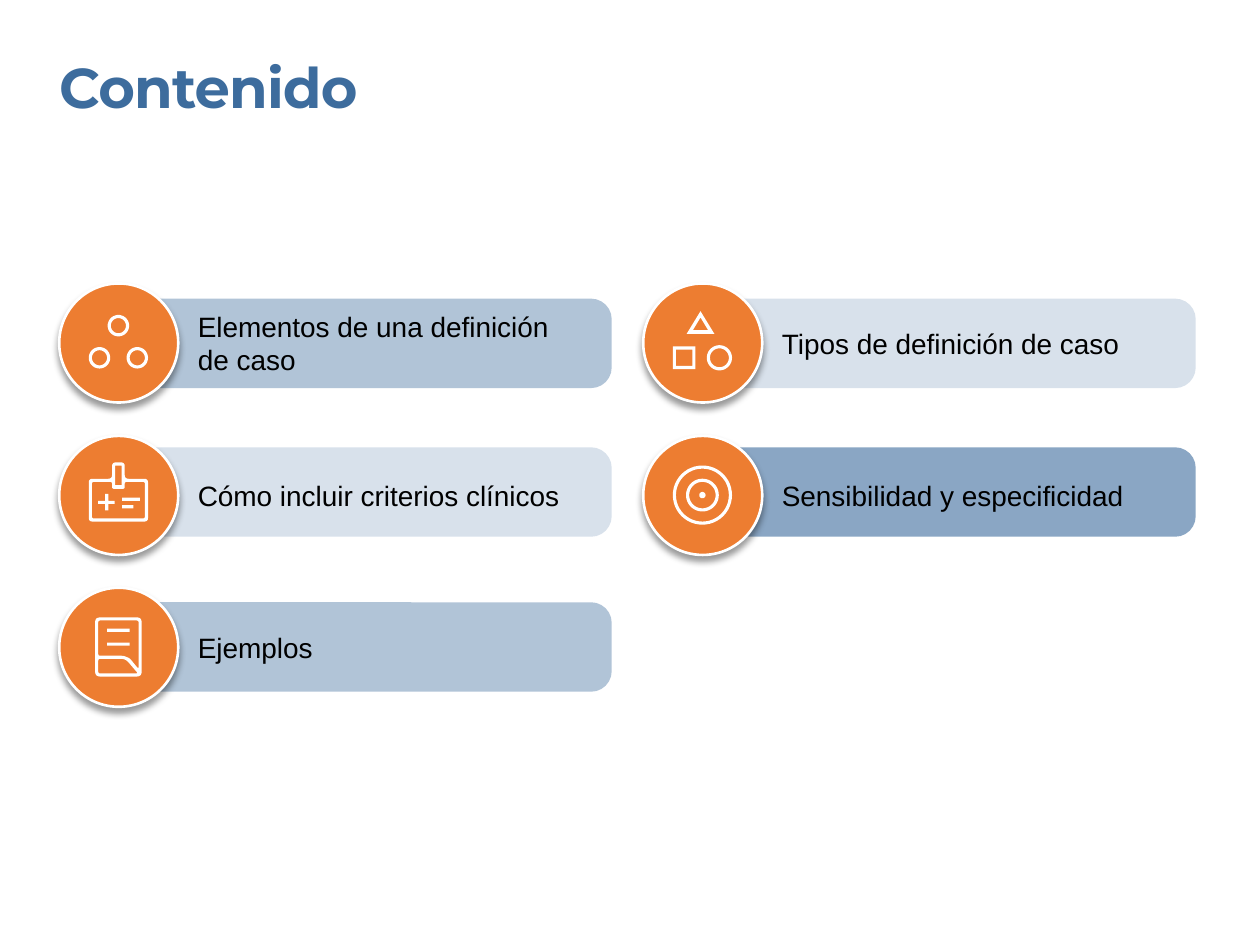
import math

import pptx
import pptx.util
import pptx.dml.color
import pptx.enum.shapes
import pptx.enum.text
import pptx.oxml
import pptx.oxml.ns

PX = 4572  # EMU, 200 px to the inch
COLORS = {"blue": "3D6C9D", "orange": "ED7D31", "white": "FFFFFF", "black": "000000"}
FORMATS = {
    "title": {"name": "Montserrat", "size": pptx.util.Pt(32), "bold": True},
    "label": {"name": "Arial", "size": pptx.util.Pt(16)},
}
SHAPES = pptx.enum.shapes.MSO_SHAPE
DISC = 189
COLUMNS = (94, 1021)
ROWS = (450, 692, 933)
BAR_TOPS = (474, 710, 956)
STROKE = 5


def rgb(name):
    return pptx.dml.color.RGBColor.from_string(COLORS[name])


def xml(tag, body="", attrs=""):
    ns = pptx.oxml.ns.nsdecls("a")
    return pptx.oxml.parse_xml(f"<a:{tag} {ns} {attrs}>{body}</a:{tag}>")


class Deck:
    def __init__(self, width, height):
        self.prs = pptx.Presentation()
        self.prs.slide_width, self.prs.slide_height = width * PX, height * PX
        self.s = self.prs.slides.add_slide(self.prs.slide_layouts[6])

    def text(self, x, y, w, h, words, style, color, spacing=None):
        tf = self.s.shapes.add_textbox(x * PX, y * PX, w * PX, h * PX).text_frame
        frame = dict.fromkeys(
            ("margin_left", "margin_top", "margin_right", "margin_bottom"), 0)
        frame["word_wrap"] = True
        frame["auto_size"] = pptx.enum.text.MSO_AUTO_SIZE.SHAPE_TO_FIT_TEXT
        for key, value in frame.items():
            setattr(tf, key, value)
        r = tf.paragraphs[0].add_run()
        r.text = words
        for key, value in FORMATS[style].items():
            setattr(r.font, key, value)
        r.font.color.rgb = rgb(color)
        if spacing is not None:
            r.font._element.set("spc", str(spacing))

    def paint(self, sp, fill):
        sp.shadow.inherit = False
        sp.fill.solid()
        sp.fill.fore_color.rgb = rgb(fill)
        sp.line.fill.background()
        return sp

    def shape(self, kind, x, y, w, h, fill):
        return self.paint(
            self.s.shapes.add_shape(kind, x * PX, y * PX, w * PX, h * PX), fill)

    def bar(self, x, y, opacity):
        sp = self.shape(SHAPES.ROUNDED_RECTANGLE, x, y, 783, 142, "blue")
        sp.adjustments[0] = 0.23
        clr = sp._element.spPr.find(".//" + pptx.oxml.ns.qn("a:srgbClr"))
        clr.append(xml("alpha", attrs=f'val="{opacity * 1000}"'))

    def disc(self, x, y):
        sp = self.shape(SHAPES.OVAL, x, y, DISC, DISC, "orange")
        sp.line.color.rgb = rgb("white")
        sp.line.width = pptx.util.Pt(1.5)
        effects = sp._element.spPr.find(pptx.oxml.ns.qn("a:effectLst"))
        effects.append(xml(
            "outerShdw", '<a:srgbClr val="000000"><a:alpha val="40000"/></a:srgbClr>',
            'blurRad="50800" dist="38100" dir="5400000" algn="t" rotWithShape="0"'))

    def icon(self, cx, cy, contours):
        """Draw closed contours, given around (cx, cy), as one outline with holes."""
        fb = None
        for contour in contours:
            start, *rest = [((cx + x) * PX, (cy + y) * PX) for x, y in contour]
            if fb is None:
                fb = self.s.shapes.build_freeform(*start)
            else:
                fb.move_to(*start)
            fb.add_line_segments(rest, close=True)
        self.paint(fb.convert_to_shape(), "white")


def circle(cx, cy, radius, steps=48):
    angles = [2 * math.pi * i / steps for i in range(steps)]
    return [(cx + radius * math.cos(a), cy + radius * math.sin(a)) for a in angles]


def ring(cx, cy, radius):
    return [circle(cx, cy, radius), circle(cx, cy, radius - STROKE)]


def box(x1, y1, x2, y2):
    return [(x1, y1), (x2, y1), (x2, y2), (x1, y2)]


def rounded(points, radius, steps=4):
    """Replace each corner by a quadratic curve."""
    result = []
    for i, corner in enumerate(points):
        ends = []
        for other in (points[i - 1], points[(i + 1) % len(points)]):
            t = radius / math.dist(corner, other)
            ends.append([c + (o - c) * t for c, o in zip(corner, other)])
        for k in range(steps + 1):
            t = k / steps
            result.append(tuple((1 - t) ** 2 * a + 2 * t * (1 - t) * c + t * t * b
                                for a, c, b in zip(ends[0], corner, ends[1])))
    return result


def badge(half, top, bottom, clip):
    """Card with a clip that meets its top edge at the height clip."""
    return [(-half, top), (-10, top), (-10, clip), (10, clip),
            (10, top), (half, top), (half, bottom), (-half, bottom)]


ELEMENTS = ring(0, -27, 17) + ring(-30, 24, 17) + ring(30, 24, 17)
TYPES = [
    [(-25, -14), (-3, -50), (19, -14)],
    [(-15, -20), (-3, -40), (9, -20)],
    box(-47, 6, -11, 42), box(-42, 11, -16, 37),
] + ring(27, 24, 20)
BADGE = [
    rounded(badge(47, -26, 42, -52), 6),
    rounded(badge(42, -21, 37, -10), 3),
    box(-5, -47, 5, -16),
    [(-21, -2), (-16, -2), (-16, 9), (-6, 9), (-6, 14), (-16, 14),
     (-16, 24), (-21, 24), (-21, 14), (-32, 14), (-32, 9), (-21, 9)],
    box(6, 4, 34, 9), box(6, 16, 24, 21),
]
TARGET = ring(0, 0, 47) + ring(0, 0, 26) + [circle(0, 0, 5)]
PAGE = [
    rounded(box(-37, -47, 37, 47), 8),
    rounded([(-32, -42), (32, -42), (32, 35), (18, 18), (8, 14), (-32, 14)], 3),
    rounded([(-32, 19), (8, 19), (14, 22), (31, 42), (-32, 42)], 3),
    box(-18, -29, 18, -24), box(-18, -7, 18, -2),
]

# column, row, bar opacity, label top, label, icon
TOPICS = (
    (0, 0, 40, 491, "Elementos de una definición de caso", ELEMENTS),
    (1, 0, 20, 518, "Tipos de definición de caso", TYPES),
    (0, 1, 20, 760, "Cómo incluir criterios clínicos", BADGE),
    (1, 1, 60, 760, "Sensibilidad y especificidad", TARGET),
    (0, 2, 40, 1001, "Ejemplos", PAGE),
)


def main():
    d = Deck(2000, 1500)
    d.text(94, 84, 1710, 108, "Contenido", "title", "blue", spacing=-50)
    for col, row, opacity, top, label, contours in TOPICS:
        x, y = COLUMNS[col], ROWS[row]
        d.bar(x + DISC // 2, BAR_TOPS[row], opacity)
        d.text(x + 220, top, (602, 584)[col], 108 if row == col == 0 else 54,
               label, "label", "black")
        d.disc(x, y)
        d.icon(x + DISC // 2, y + DISC // 2, contours)
    d.prs.save("out.pptx")


if __name__ == "__main__":
    main()
